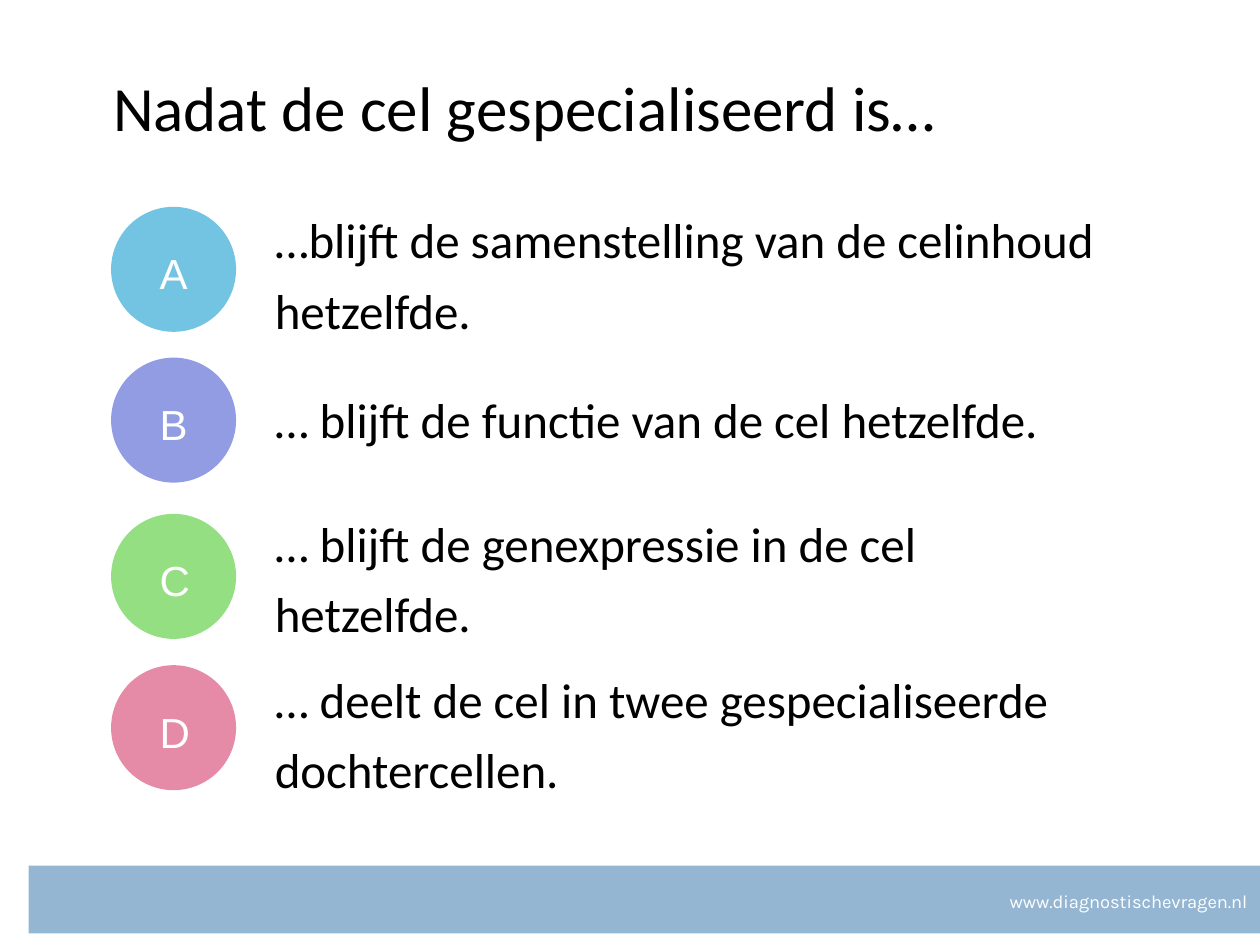
from pptx import Presentation, util as u
from pptx.dml.color import RGBColor
from pptx.enum import shapes, text

COLOURS = {
    "bar": "94B6D2", "white": "FFFFFF", "black": "000000",
    "A": "73C3E3", "B": "919CE3", "C": "95DF83", "D": "E58BA8",
}
# letter, top of the circle, top of the answer box (cm), answer
ANSWERS = [
    ("A", 4.17, 4.6, "…blijft de samenstelling van de celinhoud hetzelfde."),
    ("B", 7.21, 7.52, "… blijft de functie van de cel hetzelfde."),
    ("C", 10.36, 10.72, "… blijft de genexpressie in de cel hetzelfde."),
    ("D", 13.41, 13.87, "… deelt de cel in twee gespecialiseerde dochtercellen."),
]
CIRCLE_LEFT, CIRCLE_SIZE = 2.24, 2.52
LETTER_LEFT, LETTER_DROP = 3.12, 0.63
ANSWER_LEFT = 5.44


class QuizSlide:
    def __init__(self, deck):
        self.page = deck.slides.add_slide(deck.slide_layouts[6])

    def colour(self, name):
        return RGBColor.from_string(COLOURS[name])

    def filled(self, parent, kind, place, colour):
        shape = parent.add_shape(kind, *map(u.Cm, place))
        shape.shadow.inherit = False
        shape.fill.solid()
        shape.fill.fore_color.rgb = self.colour(colour)
        shape.line.fill.background()

    def label(self, parent, place, wording, font, size, colour="black", spacing=1.0,
              inset=(0.25, 0.13), anchor=text.MSO_ANCHOR.TOP, align=text.PP_ALIGN.LEFT):
        """Add a text box; inset is the horizontal and vertical margin in cm."""
        box = parent.add_textbox(*map(u.Cm, place))
        frame = box.text_frame
        frame.word_wrap = True
        frame.vertical_anchor = anchor
        frame.margin_left = frame.margin_right = u.Cm(inset[0])
        frame.margin_top = frame.margin_bottom = u.Cm(inset[1])
        para = frame.paragraphs[0]
        para.alignment = align
        para.line_spacing = spacing
        span = para.add_run()
        span.text = wording
        span.font.name = font
        span.font.size = u.Pt(size)
        span.font.color.rgb = self.colour(colour)

    def answer(self, letter, circle_top, answer_top, wording):
        parent = self.page.shapes.add_group_shape().shapes
        style = dict(spacing=1.2, inset=(0.1, 0.1), anchor=text.MSO_ANCHOR.MIDDLE)
        self.filled(parent, shapes.MSO_SHAPE.OVAL,
                    (CIRCLE_LEFT, circle_top, CIRCLE_SIZE, CIRCLE_SIZE), letter)
        self.label(parent, (LETTER_LEFT, circle_top + LETTER_DROP, 1, 1.2),
                   letter, "Arial", 24, "white", **style)
        self.label(parent, (ANSWER_LEFT, answer_top, 17.1, 1.62),
                   wording, "Calibri", 28, **style)

    def footer(self, address):
        self.filled(self.page.shapes, shapes.MSO_SHAPE.RECTANGLE,
                    (0.58, 17.45, 24.82, 1.37), "bar")
        self.label(self.page.shapes, (18.97, 17.81, 6.43, 0.71), address,
                   "Karla", 10.5, "white", align=text.PP_ALIGN.RIGHT)

    def title(self, wording):
        self.label(self.page.shapes, (2.03, 1.09, 22.53, 2.39), wording,
                   "Calibri", 36, spacing=1.11)


def main():
    deck = Presentation()
    deck.slide_width, deck.slide_height = u.Cm(25.4), u.Cm(19.05)
    slide = QuizSlide(deck)
    slide.footer("www.diagnostischevragen.nl")
    for row in ANSWERS:
        slide.answer(*row)
    slide.title("Nadat de cel gespecialiseerd is…")
    deck.save("out.pptx")


if __name__ == "__main__":
    main()
